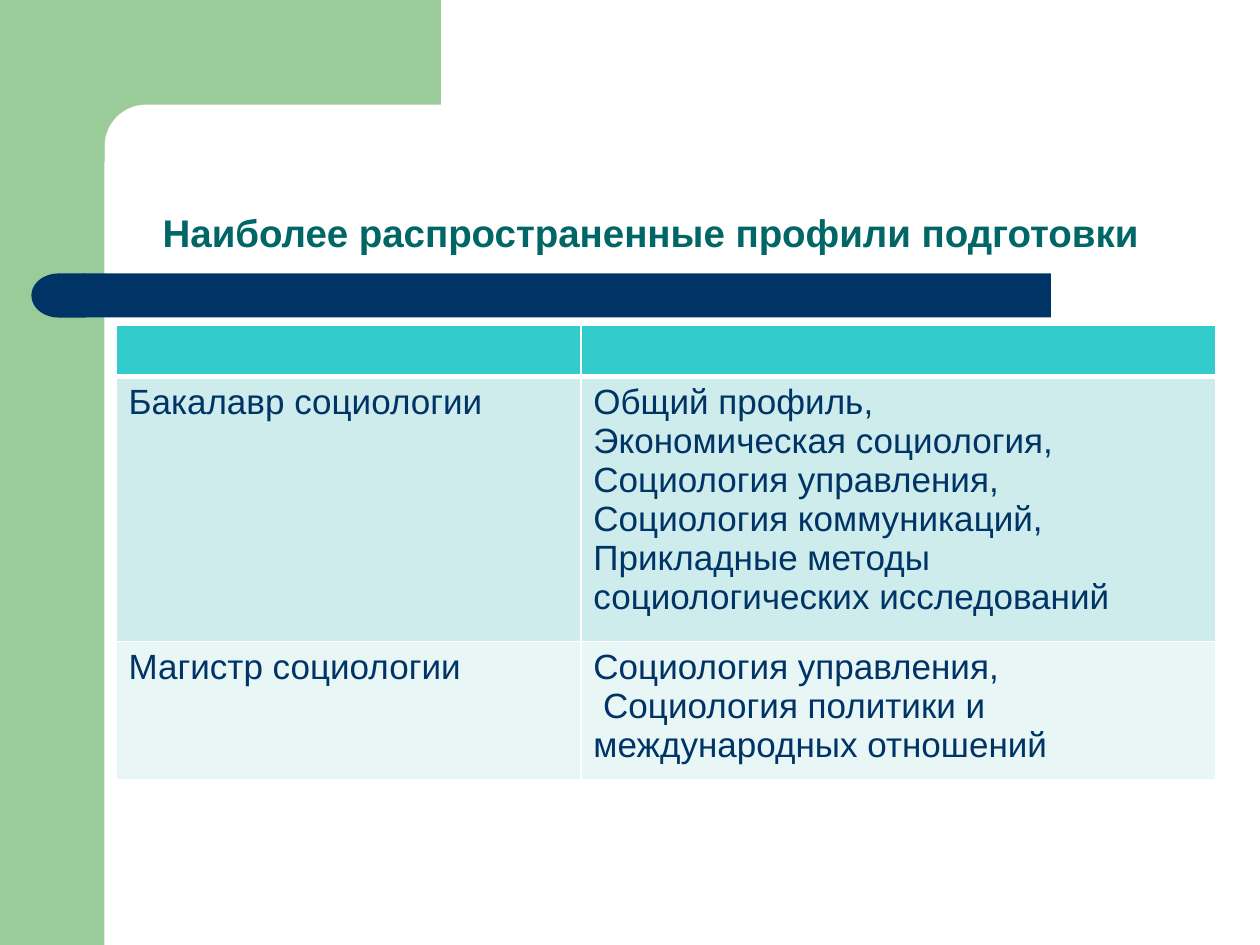
from dataclasses import dataclass
from math import cos, pi, sin

from lxml.etree import SubElement
from pptx import Presentation
from pptx.dml.color import RGBColor
from pptx.enum.shapes import MSO_SHAPE
from pptx.enum.text import MSO_ANCHOR, PP_ALIGN
from pptx.oxml.ns import qn
from pptx.util import Inches, Pt


@dataclass(frozen=True)
class Theme:
    font: str = "Arial"
    green: str = "99CC99"
    navy: str = "003366"
    title: str = "006666"
    header: str = "33CCCC"
    border: str = "FFFFFF"
    title_size: int = 22
    body_size: int = 20


@dataclass(frozen=True)
class Block:
    left: float
    top: float
    width: float
    height: float
    preset: MSO_SHAPE
    color: str
    flipped: bool = False


@dataclass(frozen=True)
class ProfileRow:
    height: float
    fill: str
    degree: str = ""
    profiles: str = ""
    bottom_border: int = 1


THEME = Theme()

SIDEBAR = Block(0, 0, 0.83, 7.5, MSO_SHAPE.RECTANGLE, THEME.green)
BAR = Block(0.67, 2.17, 7.67, 0.35, MSO_SHAPE.RECTANGLE, THEME.navy)
BAR_CAP = Block(0.25, 2.17, 0.43, 0.35, MSO_SHAPE.FLOWCHART_DELAY, THEME.navy, True)

COLUMN_WIDTHS = (3.69, 5.04)
PROFILE_ROWS = (
    ProfileRow(0.41, THEME.header, bottom_border=3),
    ProfileRow(
        1.95, "CEECEC", "Бакалавр социологии",
        "Общий профиль,\nЭкономическая социология,\nСоциология управления,\n"
        "Социология коммуникаций,\nПрикладные методы социологических исследований"),
    ProfileRow(
        1.03, "E8F6F6", "Магистр социологии",
        "Социология управления,\n Социология политики и международных отношений"),
)


def paint(shape, color: str) -> None:
    shape.shadow.inherit = False
    shape.fill.solid()
    shape.fill.fore_color.rgb = RGBColor.from_string(color)
    shape.line.fill.background()


def draw_block(slide, block: Block) -> None:
    shape = slide.shapes.add_shape(
        block.preset, Inches(block.left), Inches(block.top),
        Inches(block.width), Inches(block.height))
    paint(shape, block.color)
    if block.flipped:
        shape.element.spPr.xfrm.set("flipH", "1")


def draw_corner(slide) -> None:
    """Top band whose inner corner is a quarter circle."""
    center, radius, steps = 1.16, 0.33, 24
    angles = [pi / 2 * step / steps for step in range(steps + 1)]
    curve = [(center - radius * sin(a), center - radius * cos(a)) for a in angles]
    outline = [(3.5, 0.83), *curve, (0.83, 1.28), (0.5, 1.28), (0.5, 0)]
    builder = slide.shapes.build_freeform(Inches(3.5), 0, scale=1.0)
    builder.add_line_segments([(Inches(x), Inches(y)) for x, y in outline], close=True)
    paint(builder.convert_to_shape(), THEME.green)


def style_text(frame, size: int, color: str, bold: bool = False) -> None:
    for paragraph in frame.paragraphs:
        for run in paragraph.runs:
            run.font.name = THEME.font
            run.font.size = Pt(size)
            run.font.bold = bold
            run.font.color.rgb = RGBColor.from_string(color)


def draw_title(slide, wording: str) -> None:
    heading = slide.shapes.add_textbox(
        Inches(0.83), Inches(0.83), Inches(8.67), Inches(1.25))
    frame = heading.text_frame
    frame.word_wrap = True
    frame.vertical_anchor = MSO_ANCHOR.BOTTOM
    frame.text = wording
    frame.paragraphs[0].alignment = PP_ALIGN.CENTER
    frame.paragraphs[0].line_spacing = 0.9
    style_text(frame, THEME.title_size, THEME.title, bold=True)


def set_borders(cell, top: int, bottom: int) -> None:
    properties = cell._tc.get_or_add_tcPr()
    widths = {"a:lnL": 1, "a:lnR": 1, "a:lnT": top, "a:lnB": bottom}
    for position, (side, width) in enumerate(widths.items()):
        line = SubElement(properties, qn(side), w=str(Pt(width)))
        fill = SubElement(line, qn("a:solidFill"))
        SubElement(fill, qn("a:srgbClr"), val=THEME.border)
        properties.insert(position, line)


def draw_profiles(slide, rows: tuple[ProfileRow, ...]) -> None:
    table = slide.shapes.add_table(
        len(rows), len(COLUMN_WIDTHS), Inches(0.92), Inches(2.58),
        Inches(sum(COLUMN_WIDTHS)), Inches(sum(row.height for row in rows))).table
    table.first_row = table.horz_banding = False
    for column, width in zip(table.columns, COLUMN_WIDTHS):
        column.width = Inches(width)

    top_border = 1
    for index, row in enumerate(rows):
        table.rows[index].height = Inches(row.height)
        for column, wording in enumerate((row.degree, row.profiles)):
            cell = table.cell(index, column)
            cell.fill.solid()
            cell.fill.fore_color.rgb = RGBColor.from_string(row.fill)
            set_borders(cell, top_border, row.bottom_border)
            if wording:
                cell.text_frame.text = wording
                style_text(cell.text_frame, THEME.body_size, THEME.navy)
        top_border = row.bottom_border


def main() -> None:
    presentation = Presentation()
    presentation.slide_width = Inches(10)
    presentation.slide_height = Inches(7.5)
    slide = presentation.slides.add_slide(presentation.slide_layouts[6])

    # Background decoration
    draw_block(slide, SIDEBAR)
    draw_corner(slide)
    draw_block(slide, BAR)
    draw_block(slide, BAR_CAP)

    # Content
    draw_title(slide, "Наиболее распространенные профили подготовки")
    draw_profiles(slide, PROFILE_ROWS)

    presentation.save("out.pptx")


if __name__ == "__main__":
    main()
